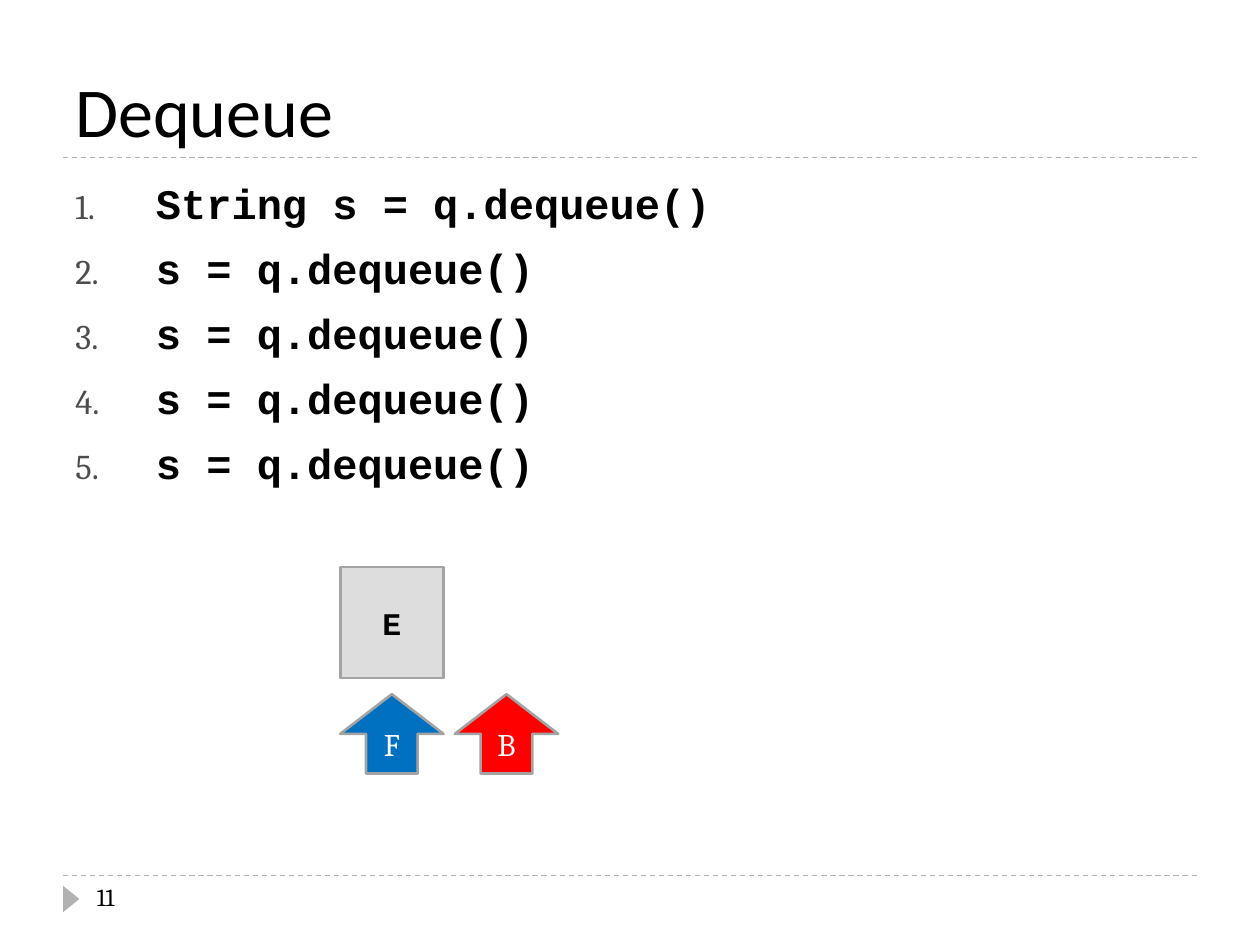
from pptx import Presentation
from pptx.dml.color import RGBColor
from pptx.enum.dml import MSO_LINE
from pptx.enum.shapes import MSO_CONNECTOR, MSO_SHAPE
from pptx.enum.text import MSO_ANCHOR, PP_ALIGN
from pptx.oxml.ns import qn
from pptx.util import Inches, Pt
from lxml.etree import SubElement


def color(code):
    return RGBColor.from_string(code)


class Deck:
    """Hold the style and the current slide, and add each kind of element."""

    serif, sans, mono = "Cambria", "Calibri", "Courier New"
    black, white, rule, edge, mark = "000000", "FFFFFF", "B2B2B2", "A3A3A3", "4D4D4D"

    def __init__(self, slide):
        self.slide = slide

    def font(self, run, face, size, code, bold=False):
        run.font.name = face
        run.font.size = Pt(size)
        run.font.bold = bold
        run.font.color.rgb = color(code)

    def line(self, y):
        link = self.slide.shapes.add_connector(
            MSO_CONNECTOR.STRAIGHT, Inches(0.5), Inches(y), Inches(9.5), Inches(y))
        link.line.color.rgb = color(self.rule)
        link.line.width = Pt(0.75)
        link.line.dash_style = MSO_LINE.DASH
        SubElement(link._element.spPr, qn("a:effectLst"))

    def shape(self, kind, box, fill):
        shape = self.slide.shapes.add_shape(kind, *map(Inches, box))
        shape.shadow.inherit = False
        shape.fill.solid()
        shape.fill.fore_color.rgb = color(fill)
        shape.line.fill.background()
        return shape

    def label(self, kind, box, fill, text, face, code, bold=False):
        shape = self.shape(kind, box, fill)
        shape.line.color.rgb = color(self.edge)
        shape.line.width = Pt(1.5)
        frame = shape.text_frame
        frame.text = text
        frame.vertical_anchor = MSO_ANCHOR.MIDDLE
        frame.paragraphs[0].alignment = PP_ALIGN.CENTER
        self.font(frame.paragraphs[0].runs[0], face, 18, code, bold)

    def box(self, place, anchor=MSO_ANCHOR.TOP):
        frame = self.slide.shapes.add_textbox(*map(Inches, place)).text_frame
        frame.word_wrap = True
        frame.vertical_anchor = anchor
        return frame

    def text(self, place, text, face, size, anchor=MSO_ANCHOR.TOP):
        frame = self.box(place, anchor)
        frame.text = text
        self.font(frame.paragraphs[0].runs[0], face, size, self.black)

    def steps(self, place, items):
        frame = self.box(place)
        frame.text = "\n".join(" " for item in items)
        for para, item in zip(frame.paragraphs, items):
            para.space_before = Pt(6)
            self.number(para)
            self.font(para.runs[0], self.serif, 26, self.black)
            code = para.add_run()
            code.text = item
            self.font(code, self.mono, 24, self.black, True)

    def number(self, para):
        props = para._p.get_or_add_pPr()
        props.set("marL", str(Inches(0.56)))
        props.set("indent", str(-Inches(0.56)))
        tint = SubElement(props, qn("a:buClr"))
        SubElement(tint, qn("a:srgbClr"), val=self.mark)
        SubElement(props, qn("a:buSzPct"), val="76000")
        SubElement(props, qn("a:buFont"), typeface=self.serif)
        SubElement(props, qn("a:buAutoNum"), type="arabicPeriod")


def main():
    show = Presentation()
    show.slide_width, show.slide_height = Inches(10), Inches(7.5)
    deck = Deck(show.slides.add_slide(show.slide_layouts[6]))

    for y in (6.95, 1.25):
        deck.line(y)
    arrow = deck.shape(MSO_SHAPE.ISOSCELES_TRIANGLE, (0.46, 7.07, 0.21, 0.13), deck.rule)
    arrow.rotation = 90

    deck.text((0.5, 0.17, 9, 1.08), "Dequeue", deck.sans, 40, MSO_ANCHOR.BOTTOM)
    call = "s = q.dequeue()"
    deck.steps((0.5, 1.33, 9, 5.4), ["String " + call] + [call] * 4)
    deck.text((0.67, 6.95, 2.17, 0.4), "11", deck.serif, 14)

    left, wide = 2.7, 0.82
    deck.label(MSO_SHAPE.RECTANGLE, (left, 4.5, wide, 0.88), "DDDDDD",
               "E", deck.mono, deck.black, True)
    for x, fill, name in ((left, "0070C0", "F"), (3.61, "FF0000", "B")):
        deck.label(MSO_SHAPE.UP_ARROW, (x, 5.51, wide, 0.63), fill,
                   name, deck.serif, deck.white)

    show.save("out.pptx")


if __name__ == "__main__":
    main()
